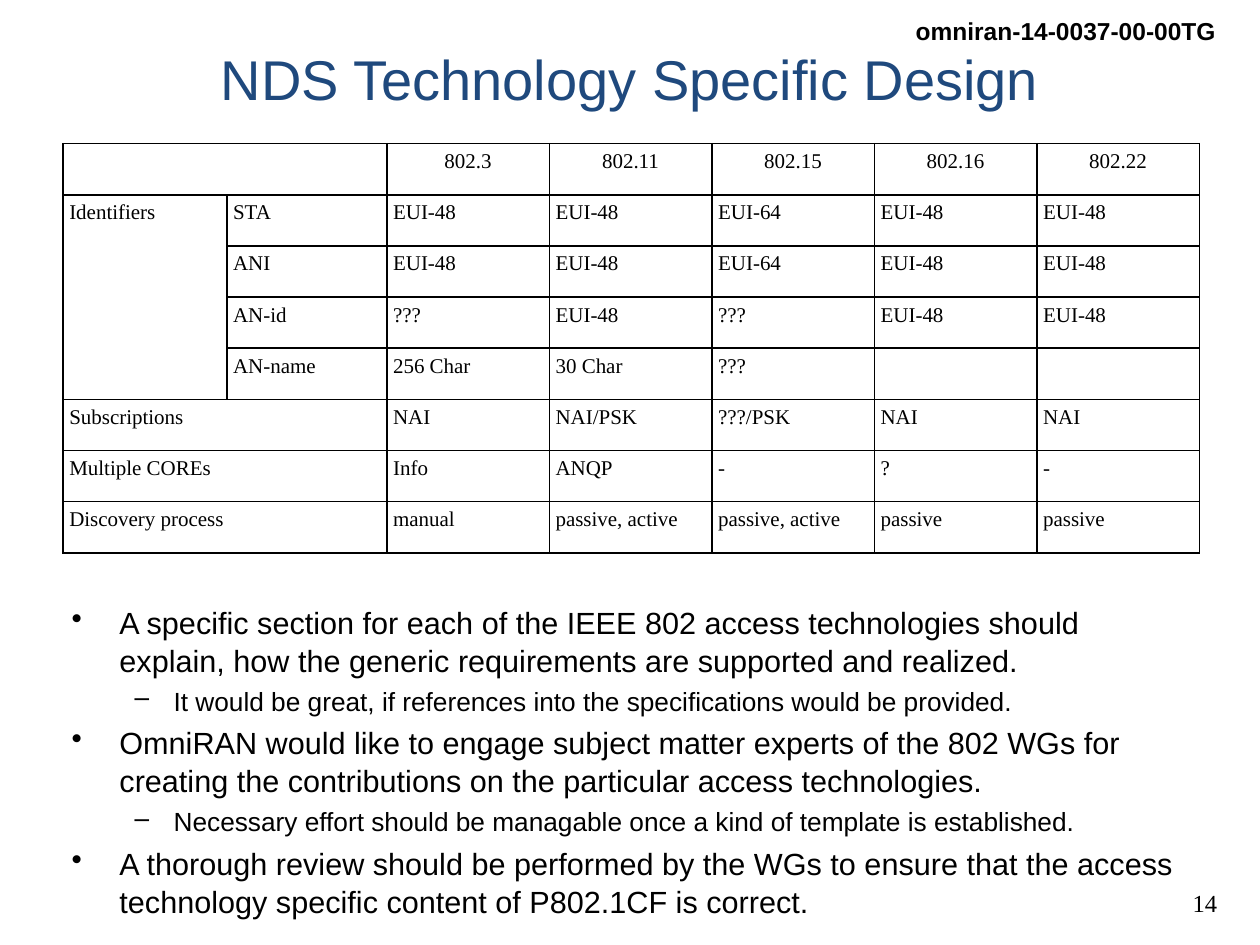
import pptx
import pptx.util
import pptx.dml.color
import pptx.enum.text
import pptx.oxml
import pptx.oxml.ns
from pptx.util import Inches, Pt

ALIGN = pptx.enum.text.PP_ALIGN
SANS, SERIF = "Arial", "Times New Roman"
BLACK, NAVY = "000000", "1F497D"

DOCUMENT_ID = "omniran-14-0037-00-00TG"
PAGE_NUMBER = "14"
TITLE = "NDS Technology Specific Design"

DESIGN_ROWS = [
    ["", "", "802.3", "802.11", "802.15", "802.16", "802.22"],
    ["Identifiers", "STA", "EUI-48", "EUI-48", "EUI-64", "EUI-48", "EUI-48"],
    ["", "ANI", "EUI-48", "EUI-48", "EUI-64", "EUI-48", "EUI-48"],
    ["", "AN-id", "???", "EUI-48", "???", "EUI-48", "EUI-48"],
    ["", "AN-name", "256 Char", "30 Char", "???", "", ""],
    ["Subscriptions", "", "NAI", "NAI/PSK", "???/PSK", "NAI", "NAI"],
    ["Multiple COREs", "", "Info", "ANQP", "-", "?", "-"],
    ["Discovery process", "", "manual", "passive, active", "passive, active", "passive", "passive"],
]
MERGES = [((0, 0), (0, 1)), ((1, 0), (4, 0))] + [((row, 0), (row, 1)) for row in (5, 6, 7)]
COLUMN_WIDTHS = [1.3, 1.27] + [1.29] * 5
ROW_HEIGHT = 0.406

POINTS = [
    (0, "A specific section for each of the IEEE 802 access technologies should explain, "
        "how the generic requirements are supported and realized."),
    (1, "It would be great, if references into the specifications would be provided."),
    (0, "OmniRAN would like to engage subject matter experts of the 802 WGs for creating "
        "the contributions on the particular access technologies."),
    (1, "Necessary effort should be managable once a kind of template is established."),
    (0, "A thorough review should be performed by the WGs to ensure that the access "
        "technology specific content of P802.1CF is correct."),
]
LEVELS = [
    {"size": 17.5, "left": 0.38, "indent": -0.38, "bullet": "•"},
    {"size": 15, "left": 0.81, "indent": -0.31, "bullet": "–"},
]


def rgb(color):
    return pptx.dml.color.RGBColor.from_string(color)


def style(paragraph, size, font, color=BLACK, align=ALIGN.LEFT, bold=False):
    paragraph.alignment = align
    for run in paragraph.runs:
        run.font.size = Pt(size)
        run.font.name = font
        run.font.bold = bold
        run.font.color.rgb = rgb(color)


def add_text(slide, box, text, wrap, *look):
    frame = slide.shapes.add_textbox(*map(Inches, box)).text_frame
    frame.word_wrap = wrap
    frame.text = text
    for paragraph in frame.paragraphs:
        style(paragraph, *look)
    return frame


def set_bullet(paragraph, left, indent, bullet):
    properties = paragraph._p.get_or_add_pPr()
    properties.set("marL", str(Inches(left)))
    properties.set("indent", str(Inches(indent)))
    mark = pptx.oxml.parse_xml(f'<a:buChar {pptx.oxml.ns.nsdecls("a")} char="{bullet}"/>')
    properties.append(mark)


def set_borders(cell, color, width):
    properties = cell._tc.get_or_add_tcPr()
    for side in ("lnL", "lnR", "lnT", "lnB"):
        properties.append(pptx.oxml.parse_xml(
            f'<a:{side} {pptx.oxml.ns.nsdecls("a")} w="{Pt(width)}">'
            f'<a:solidFill><a:srgbClr val="{color}"/></a:solidFill></a:{side}>'))


def add_design_table(slide):
    row_count, column_count = len(DESIGN_ROWS), len(COLUMN_WIDTHS)
    table = slide.shapes.add_table(
        row_count, column_count, Inches(0.5), Inches(1.14),
        Inches(sum(COLUMN_WIDTHS)), Inches(ROW_HEIGHT * row_count)).table
    table.first_row = table.horz_banding = False
    for column, width in zip(table.columns, COLUMN_WIDTHS):
        column.width = Inches(width)
    for row_index, values in enumerate(DESIGN_ROWS):
        table.rows[row_index].height = Inches(ROW_HEIGHT)
        for column_index, value in enumerate(values):
            cell = table.cell(row_index, column_index)
            cell.margin_left = cell.margin_right = Inches(0.05)
            cell.margin_top = cell.margin_bottom = Inches(0.05)
            set_borders(cell, BLACK, 1)
            cell.fill.background()
            cell.text = value
            align = ALIGN.LEFT if row_index else ALIGN.CENTER
            style(cell.text_frame.paragraphs[0], 12, SERIF, BLACK, align)
    for first, last in MERGES:
        table.cell(*first).merge(table.cell(*last))


def add_points(slide):
    text = "\n".join(point for _, point in POINTS)
    frame = add_text(slide, (0.47, 4.73, 9.03, 2.21), text, True, 17.5, SANS)
    for paragraph, (depth, _) in zip(frame.paragraphs, POINTS):
        level = LEVELS[depth]
        paragraph.level = depth
        paragraph.line_spacing = 1.04
        paragraph.space_before = Pt(level["size"] * 0.2)
        style(paragraph, level["size"], SANS)
        set_bullet(paragraph, level["left"], level["indent"], level["bullet"])


def main():
    deck = pptx.Presentation()
    deck.slide_width, deck.slide_height = Inches(10), Inches(7.5)
    slide = deck.slides.add_slide(deck.slide_layouts[6])
    add_text(slide, (7.15, 0.08, 2.6, 0.34), DOCUMENT_ID, False, 14, SANS, BLACK, ALIGN.RIGHT, True)
    add_text(slide, (9.33, 7, 0.43, 0.34), PAGE_NUMBER, False, 14, SERIF, BLACK, ALIGN.RIGHT)
    add_text(slide, (0.5, 0.3, 9, 1.25), TITLE, True, 32, SANS, NAVY, ALIGN.CENTER)
    add_design_table(slide)
    add_points(slide)
    deck.save("out.pptx")


if __name__ == "__main__":
    main()
